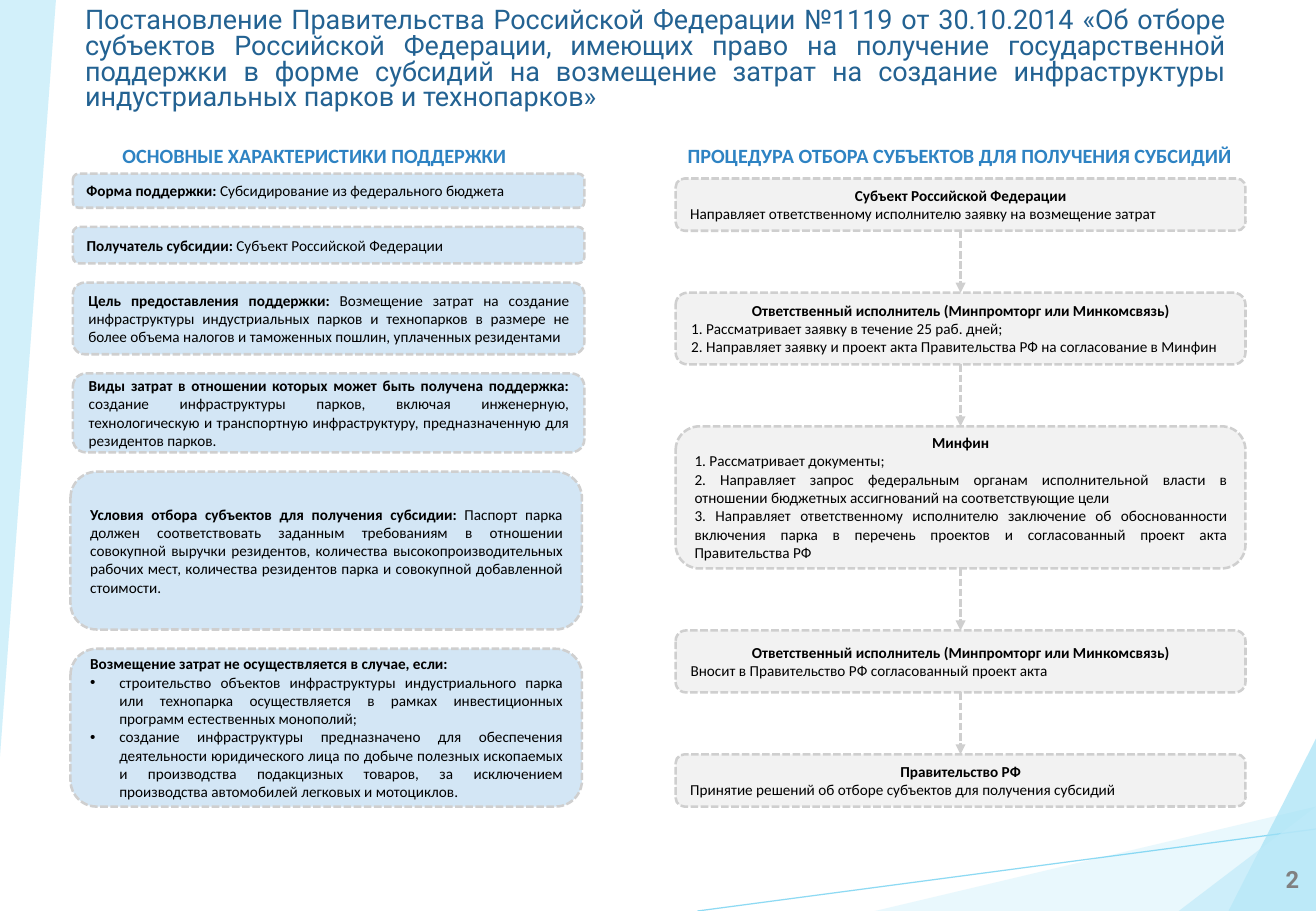
import dataclasses

import pptx
import pptx.dml.color
import pptx.enum.dml
import pptx.enum.shapes
import pptx.enum.text
import pptx.oxml.ns
import pptx.util
from lxml import etree

RGBColor = pptx.dml.color.RGBColor
Align = pptx.enum.text.PP_ALIGN
Anchor = pptx.enum.text.MSO_ANCHOR
Shape = pptx.enum.shapes.MSO_SHAPE
Pt = pptx.util.Pt
qn = pptx.oxml.ns.qn

TITLE_BLUE = RGBColor(0x23, 0x62, 0x92)
HEADING_BLUE = RGBColor(0x2E, 0x83, 0xC3)
CARD_BLUE = RGBColor(0xD3, 0xE6, 0xF5)
STEP_GRAY = RGBColor(0xF2, 0xF2, 0xF2)
DASH_GRAY = RGBColor(0xCF, 0xCF, 0xCF)
NUMBER_GRAY = RGBColor(0x80, 0x80, 0x80)
BLACK = RGBColor(0, 0, 0)
PALE_CYAN = RGBColor(0xDF, 0xF5, 0xFC)
LIGHT_CYAN = RGBColor(0xBF, 0xEA, 0xF9)
MID_CYAN = RGBColor(0x9F, 0xE0, 0xF5)
LINE_CYAN = RGBColor(0x5F, 0xCB, 0xEF)

# The page is a grid of 100 columns by 100 rows.
PAGE_WIDTH = pptx.util.Inches(10.83)
PAGE_HEIGHT = pptx.util.Inches(7.5)
COLUMN = PAGE_WIDTH / 100
ROW = PAGE_HEIGHT / 100

TITLE = ("Постановление Правительства Российской Федерации №1119 от 30.10.2014 «Об отборе "
         "субъектов Российской Федерации, имеющих право на получение государственной поддержки "
         "в форме субсидий на возмещение затрат на создание инфраструктуры индустриальных "
         "парков и технопарков»")

# Rows high, shift in columns, bold lead, plain text, bullets
CARDS = [
    (3.73, 0, "Форма поддержки: ", "Субсидирование из федерального бюджета", []),
    (4, 0, "Получатель субсидии: ", "Субъект Российской Федерации", []),
    (7.87, 0, "Цель предоставления поддержки: ",
     "Возмещение затрат на создание инфраструктуры индустриальных парков и технопарков в "
     "размере не более объема налогов и таможенных пошлин, уплаченных резидентами", []),
    (8.67, 0, "Виды затрат в отношении которых может быть получена поддержка: ",
     "создание инфраструктуры парков, включая инженерную, технологическую и транспортную "
     "инфраструктуру, предназначенную для резидентов парков.", []),
    (17.33, -0.18, "Условия отбора субъектов для получения субсидии: ",
     "Паспорт парка должен соответствовать заданным требованиям в отношении совокупной "
     "выручки резидентов, количества высокопроизводительных рабочих мест, количества "
     "резидентов парка и совокупной добавленной стоимости.", []),
    (17.33, -0.18, "Возмещение затрат не осуществляется в случае, если:", "", [
        "строительство объектов инфраструктуры индустриального парка или технопарка "
        "осуществляется в рамках инвестиционных программ естественных монополий;",
        "создание инфраструктуры предназначено для обеспечения деятельности юридического лица "
        "по добыче полезных ископаемых и производства подакцизных товаров, за исключением "
        "производства автомобилей легковых и мотоциклов."]),
]

EXECUTOR = "Ответственный исполнитель (Минпромторг или Минкомсвязь)"
# Rows high, actor, actions
STEPS = [
    (5.73, "Субъект Российской Федерации",
     ["Направляет ответственному исполнителю заявку на возмещение затрат"]),
    (7.87, EXECUTOR,
     ["1. Рассматривает заявку в течение 25 раб. дней;",
      "2. Направляет заявку и проект акта Правительства РФ на согласование в Минфин"]),
    (15.6, "Минфин",
     ["1. Рассматривает документы;",
      "2. Направляет запрос федеральным органам исполнительной власти в отношении бюджетных "
      "ассигнований на соответствующие цели",
      "3. Направляет ответственному исполнителю заключение об обоснованности включения парка "
      "в перечень проектов и согласованный проект акта Правительства РФ"]),
    (6.8, EXECUTOR, ["Вносит в Правительство РФ согласованный проект акта"]),
    (5.73, "Правительство РФ",
     ["Принятие решений об отборе субъектов для получения субсидий"]),
]


@dataclasses.dataclass
class Box:
    left: float
    top: float
    width: float
    height: float

    def lengths(self):
        return (round(self.left * COLUMN), round(self.top * ROW),
                round(self.width * COLUMN), round(self.height * ROW))


def add_span(para, text, size, color, bold=False, font="Calibri"):
    span = para.add_run()
    span.text = text
    span.font.size, span.font.bold, span.font.name = Pt(size), bold, font
    span.font.color.rgb = color


def add_label(page, box, text, size, color, font="Calibri", align=Align.LEFT):
    frame = page.shapes.add_textbox(*box.lengths()).text_frame
    frame.word_wrap = True
    frame.paragraphs[0].alignment = align
    add_span(frame.paragraphs[0], text, size, color, True, font)


def set_opacity(shape, percent):
    for color in shape._element.spPr.iter(qn("a:srgbClr")):
        etree.SubElement(color, qn("a:alpha")).set("val", str(percent * 1000))


def remove_effects(connector):
    etree.SubElement(connector._element.spPr, qn("a:effectLst"))


def style_dash(line):
    line.color.rgb = DASH_GRAY
    line.width = Pt(1.5)
    line.dash_style = pptx.enum.dml.MSO_LINE.SQUARE_DOT


def add_card(page, box, fill):
    card = page.shapes.add_shape(Shape.ROUNDED_RECTANGLE, *box.lengths())
    card.shadow.inherit = False
    card.fill.solid()
    card.fill.fore_color.rgb = fill
    style_dash(card.line)
    card.text_frame.word_wrap = True
    card.text_frame.vertical_anchor = Anchor.MIDDLE
    return card


def add_line(frame, text, bullet=False):
    para = frame.add_paragraph()
    para.alignment = Align.JUSTIFY
    add_span(para, text, 9, BLACK)
    if bullet:
        settings = para._p.get_or_add_pPr()
        indent = pptx.util.Inches(0.24)
        settings.set("marL", str(indent))
        settings.set("indent", str(-indent))
        etree.SubElement(settings, qn("a:buFont")).set("typeface", "Arial")
        etree.SubElement(settings, qn("a:buChar")).set("char", "•")


def stack(box, first_row, heights):
    """Boxes from first_row down to the foot of box, with equal gaps."""
    gap = (box.height - first_row - sum(heights)) / (len(heights) - 1)
    top = box.top + first_row
    for height in heights:
        yield Box(box.left, top, box.width, height)
        top += height + gap


def draw_backdrop(page, box):
    def finish(shape, color, opacity):
        shape.shadow.inherit = False
        shape.fill.solid()
        shape.fill.fore_color.rgb = color
        shape.line.fill.background()
        set_opacity(shape, opacity)

    def add_corner(width, height, color):
        corner = Box(box.left + box.width - width, box.top + box.height - height, width, height)
        triangle = page.shapes.add_shape(Shape.ISOSCELES_TRIANGLE, *corner.lengths())
        triangle.adjustments[0] = 1
        finish(triangle, color, 66)

    add_corner(33.52, 11.47, PALE_CYAN)
    left, top, width, height = box.lengths()
    outline = page.shapes.build_freeform(left, top)
    outline.add_line_segments([(left + round(width * 0.0425), top),
                               (left, top + round(height * 0.83))])
    finish(outline.convert_to_shape(), LIGHT_CYAN, 70)
    ray = page.shapes.add_connector(
        pptx.enum.shapes.MSO_CONNECTOR.STRAIGHT, left + width, top + round(height * 0.91),
        left + round(width * 0.53), top + height)
    ray.line.color.rgb = LINE_CYAN
    ray.line.width = Pt(0.75)
    set_opacity(ray, 70)
    remove_effects(ray)
    add_corner(6.65, 18.93, MID_CYAN)
    add_corner(10.43, 11.47, LIGHT_CYAN)


def draw_title(page, box):
    title = page.shapes.title
    title.left, title.top, title.width, title.height = box.lengths()
    frame = title.text_frame
    frame.word_wrap = True
    frame.auto_size = pptx.enum.text.MSO_AUTO_SIZE.NONE
    frame.vertical_anchor = Anchor.TOP
    para = frame.paragraphs[0]
    para.alignment = Align.JUSTIFY
    para.line_spacing = 0.8
    add_span(para, TITLE, 16, TITLE_BLUE, font="Roboto")


def draw_characteristics(page, box):
    add_label(page, Box(box.left + 2.86, box.top, box.width - 2.86, 4),
              "ОСНОВНЫЕ ХАРАКТЕРИСТИКИ ПОДДЕРЖКИ", 12, HEADING_BLUE)
    places = stack(box, 4, [card[0] for card in CARDS])
    for place, (_, shift, lead, text, bullets) in zip(places, CARDS):
        place.left += shift
        frame = add_card(page, place, CARD_BLUE).text_frame
        para = frame.paragraphs[0]
        para.alignment = Align.JUSTIFY
        add_span(para, lead, 9, BLACK, True)
        if text:
            add_span(para, text, 9, BLACK)
        for bullet in bullets:
            add_line(frame, bullet, bullet=True)


def draw_procedure(page, box):
    add_label(page, Box(box.left, box.top, box.width + 1, 4),
              "ПРОЦЕДУРА ОТБОРА СУБЪЕКТОВ ДЛЯ ПОЛУЧЕНИЯ СУБСИДИЙ", 12, HEADING_BLUE)
    previous = None
    places = stack(box, 4.53, [step[0] for step in STEPS])
    for place, (_, actor, actions) in zip(places, STEPS):
        step = add_card(page, place, STEP_GRAY)
        para = step.text_frame.paragraphs[0]
        para.alignment = Align.CENTER
        add_span(para, actor, 9, BLACK, True)
        for action in actions:
            add_line(step.text_frame, action)
        if previous is not None:
            join_steps(page, previous, step)
        previous = step


def join_steps(page, upper, lower):
    arrow = page.shapes.add_connector(pptx.enum.shapes.MSO_CONNECTOR.STRAIGHT, 0, 0, 0, 0)
    arrow.begin_connect(upper, 2)
    arrow.end_connect(lower, 0)
    style_dash(arrow.line)
    etree.SubElement(arrow.line._get_or_add_ln(), qn("a:tailEnd")).set("type", "triangle")
    remove_effects(arrow)


def main():
    deck = pptx.Presentation()
    deck.slide_width, deck.slide_height = PAGE_WIDTH, PAGE_HEIGHT
    page = deck.slides.add_slide(deck.slide_layouts.get_by_name("Title Only"))
    draw_backdrop(page, Box(0, 0, 100, 100))
    draw_title(page, Box(5.54, 0.27, 88.55, 7.47))
    draw_characteristics(page, Box(5.54, 15.07, 38.87, 73.47))
    draw_procedure(page, Box(51.34, 15.07, 43.3, 73.47))
    add_label(page, Box(95.7, 94.27, 5, 4.5), "2", 14, NUMBER_GRAY, "Roboto", Align.CENTER)
    deck.save("out.pptx")


if __name__ == "__main__":
    main()
